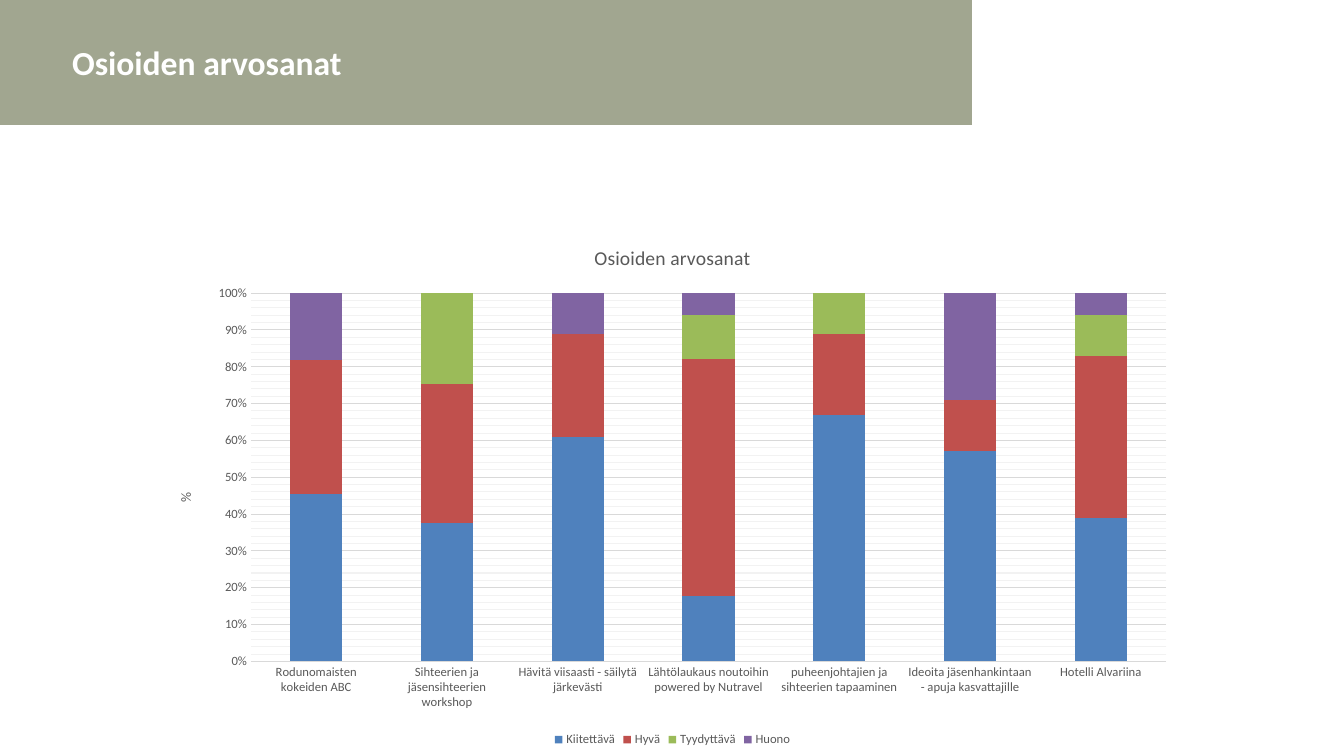
import pptx
import pptx.util
import pptx.dml.color
import pptx.chart.data
import pptx.enum.chart
import pptx.enum.shapes
import pptx.enum.text
import pptx.oxml

W, H = 13.33, 7.5
FONT = "Calibri"
GREY, GRID, MINOR_GRID = "595959", "D9D9D9", "F2F2F2"
XMLNS = ('xmlns:c="http://schemas.openxmlformats.org/drawingml/2006/chart" '
         'xmlns:a="http://schemas.openxmlformats.org/drawingml/2006/main"')
SECTIONS = [
    "Rodunomaisten kokeiden ABC",
    "Sihteerien ja jäsensihteerien workshop",
    "Hävitä viisaasti - säilytä järkevästi",
    "Lähtölaukaus noutoihin powered by Nutravel",
    "puheenjohtajien ja sihteerien tapaaminen",
    "Ideoita jäsenhankintaan - apuja kasvattajille",
    "Hotelli Alvariina",
]
GRADES = [
    ("Kiitettävä", "4F81BD", (45, 38, 61, 18, 67, 57, 39)),
    ("Hyvä", "C0504D", (36, 38, 28, 65, 22, 14, 44)),
    ("Tyydyttävä", "9BBB59", (0, 25, None, 12, 11, None, 11)),
    ("Huono", "8064A2", (18, None, 11, 6, None, 29, 6)),
]


def rgb(color):
    return pptx.dml.color.RGBColor.from_string(color)


def inches(*lengths):
    return [pptx.util.Inches(v) for v in lengths]


def style_font(font, size, color=GREY, bold=False):
    font.name, font.size, font.bold = FONT, pptx.util.Pt(size), bold
    font.color.rgb = rgb(color)


def put_text(tf, text, **style):
    p = tf.paragraphs[0]
    r = p.add_run()
    r.text = text
    style_font(r.font, **style)


def style_line(line, color):
    line.color.rgb = rgb(color)
    line.width = pptx.util.Pt(0.75)


def add_header(slide, text, x, y, w, h):
    """Draw the colour band and set the title on it."""
    title = slide.shapes.title
    band = slide.shapes.add_shape(
        pptx.enum.shapes.MSO_SHAPE.RECTANGLE, *inches(x, y, w, h))
    band.shadow.inherit = False
    band.fill.solid()
    band.fill.fore_color.rgb = rgb("A1A690")
    band.line.fill.background()
    title.element.addprevious(band.element)

    title.left, title.top, title.width, title.height = inches(
        x + 0.07 * w, y + 0.04 * h, 0.8 * w, 0.91 * h)
    tf = title.text_frame
    tf.word_wrap = True
    tf.vertical_anchor = pptx.enum.text.MSO_ANCHOR.MIDDLE
    tf.margin_left = tf.margin_right = pptx.util.Inches(0.04)
    tf.margin_top = tf.margin_bottom = pptx.util.Inches(0.04)
    put_text(tf, text, size=24, color="FFFFFF", bold=True)
    tf.paragraphs[0].alignment = pptx.enum.text.PP_ALIGN.LEFT


def set_plot_area(chart, **shares):
    """Fix the inner plot area, given as shares of the chart's size."""
    area = chart.plots[0]._element.getparent()
    for old in area.xpath("c:layout"):
        area.remove(old)
    sizes = "".join(f'<c:{k} val="{v}"/>' for k, v in shares.items())
    area.insert(0, pptx.oxml.parse_xml(
        f'<c:layout {XMLNS}>'
        '<c:manualLayout><c:layoutTarget val="inner"/>'
        '<c:xMode val="edge"/><c:yMode val="edge"/>'
        f'{sizes}</c:manualLayout></c:layout>'))


def style_minor_gridlines(axis, color):
    axis.has_minor_gridlines = True
    lines = axis._element.xpath("c:minorGridlines")[0]
    lines.append(pptx.oxml.parse_xml(
        f'<c:spPr {XMLNS}><a:ln w="{pptx.util.Pt(0.75)}"><a:solidFill>'
        f'<a:srgbClr val="{color}"/></a:solidFill></a:ln></c:spPr>'))


def style_axes(chart):
    none = pptx.enum.chart.XL_TICK_MARK.NONE
    sections, percent = chart.category_axis, chart.value_axis
    for axis in (sections, percent):
        axis.major_tick_mark = axis.minor_tick_mark = none
        style_font(axis.tick_labels.font, 9)
    style_line(sections.format.line, GRID)

    percent.format.line.fill.background()
    percent.minimum_scale, percent.maximum_scale = 0, 1
    percent.major_unit, percent.minor_unit = 0.1, 0.02
    percent.tick_labels.number_format = "0%"
    percent.tick_labels.number_format_is_linked = False
    percent.has_major_gridlines = True
    style_line(percent.major_gridlines.format.line, GRID)
    style_minor_gridlines(percent, MINOR_GRID)
    put_text(percent.axis_title.text_frame, "%", size=10)


def add_grade_chart(slide, title, x, y, w, h):
    data = pptx.chart.data.CategoryChartData()
    data.categories = SECTIONS
    for name, _, values in GRADES:
        data.add_series(name, values)
    chart = slide.shapes.add_chart(
        pptx.enum.chart.XL_CHART_TYPE.COLUMN_STACKED_100,
        *inches(x, y, w, h), data).chart
    style_font(chart.font, 10)
    chart.has_title = True
    put_text(chart.chart_title.text_frame, title, size=14)

    plot = chart.plots[0]
    plot.gap_width, plot.overlap = 150, 100
    plot.vary_by_categories = False
    for series, (_, color, _) in zip(plot.series, GRADES):
        series.format.fill.solid()
        series.format.fill.fore_color.rgb = rgb(color)
    style_axes(chart)
    set_plot_area(chart, x=0.09, y=0.13, w=0.89, h=0.7)

    chart.has_legend = True
    chart.legend.position = pptx.enum.chart.XL_LEGEND_POSITION.BOTTOM
    chart.legend.include_in_layout = False
    style_font(chart.legend.font, 9)


def main():
    prs = pptx.Presentation()
    prs.slide_width, prs.slide_height = inches(W, H)
    slide = prs.slides.add_slide(prs.slide_layouts.get_by_name("Title Only"))
    heading = "Osioiden arvosanat"
    add_header(slide, heading, 0, 0, 9.64, 1.24)
    add_grade_chart(slide, heading, 1.57, 2.23, 10.2, 5.22)
    prs.save("out.pptx")


if __name__ == "__main__":
    main()
